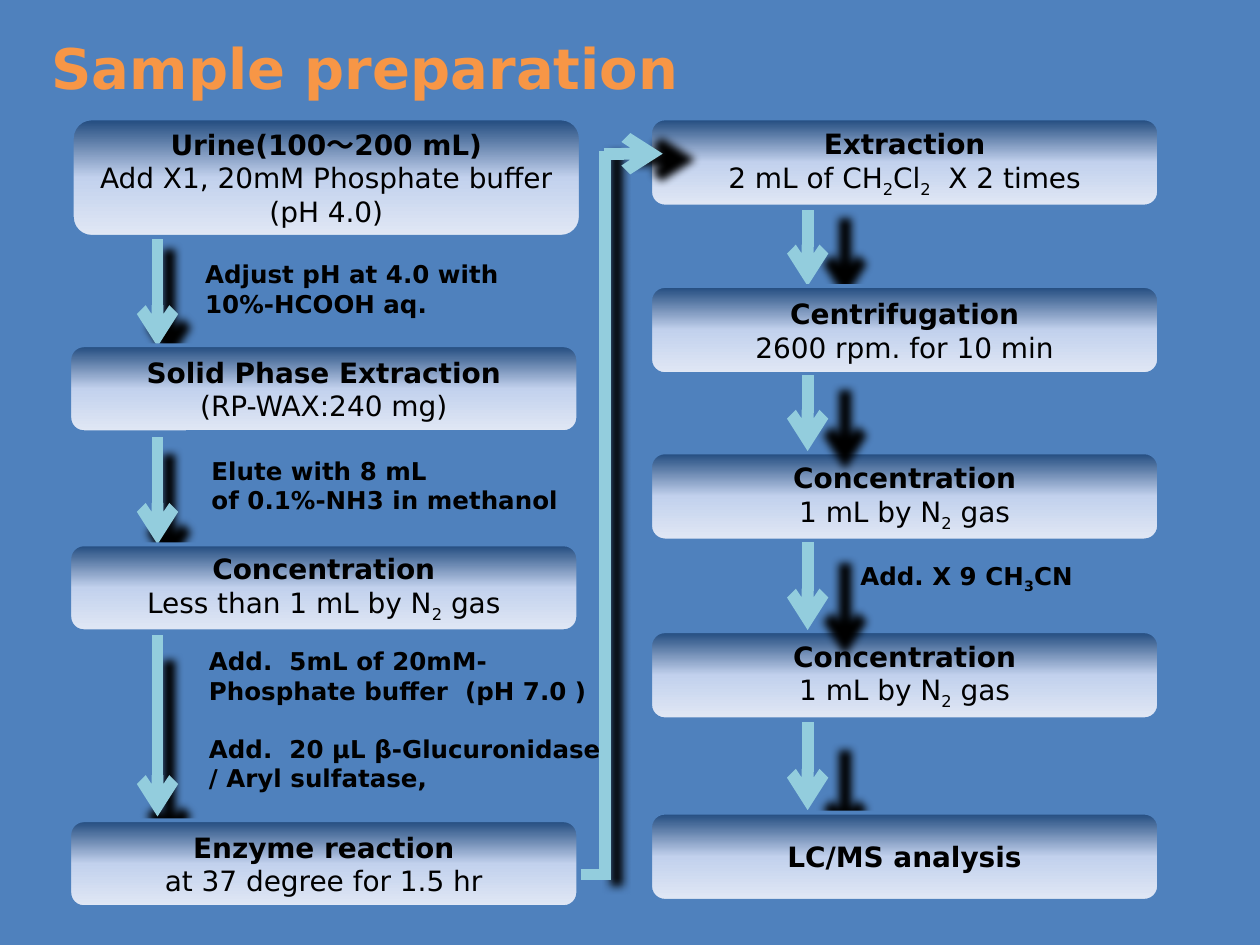
import copy

import pptx
import pptx.dml.color
import pptx.enum.shapes
import pptx.enum.text
import pptx.oxml.ns
import pptx.oxml.xmlchemy
import pptx.util
from lxml import etree

BLUE = pptx.dml.color.RGBColor(0x4F, 0x81, 0xBD)
ORANGE = pptx.dml.color.RGBColor(0xF7, 0x96, 0x46)
AQUA = pptx.dml.color.RGBColor(0x93, 0xCD, 0xDD)
BLACK = pptx.dml.color.RGBColor(0, 0, 0)
NAVY = pptx.dml.color.RGBColor(0x1F, 0x49, 0x7D)
MIST = pptx.dml.color.RGBColor(0xC2, 0xD1, 0xED)
PALE = pptx.dml.color.RGBColor(0xE1, 0xE8, 0xF5)
FONT = "DejaVu Sans"
COLUMNS, ROWS = 100, 75
LEFT, RIGHT = 5.5, 51.6
LEFT_ARROW, RIGHT_ARROW = 12.5, 64.1

STEPS = [
    (5.7, 9.4, 9.4, ["Urine(100～200 mL)", "Add X1, 20mM Phosphate buffer (pH 4.0)"]),
    (LEFT, 27.4, 6.9, ["Solid Phase Extraction", "(RP-WAX:240 mg)"]),
    (LEFT, 43.2, 6.9, ["Concentration", "Less than 1 mL by N_2_ gas"]),
    (LEFT, 65.1, 6.9, ["Enzyme reaction", "at 37 degree for 1.5 hr"]),
    (RIGHT, 9.4, 7, ["Extraction", "2 mL of CH_2_Cl_2_  X 2 times"]),
    (RIGHT, 22.7, 7, ["Centrifugation", "2600 rpm. for 10 min"]),
    (RIGHT, 35.9, 7, ["Concentration", "1 mL by N_2_ gas"]),
    (RIGHT, 50.1, 7, ["Concentration", "1 mL by N_2_ gas"]),
    (RIGHT, 64.5, 7, ["LC/MS analysis"]),
]
NOTES = [
    (15.3, 20.1, 26.1, 5.7, [["Adjust pH at 4.0 with", "10%-HCOOH aq."]]),
    (15.8, 35.7, 30.3, 5.7, [["Elute with 8 mL", "of 0.1%-NH3 in methanol"]]),
    (15.6, 50.8, 33.2, 12.8, [["Add.  5mL of 20mM-", "Phosphate buffer  (pH 7.0 )"],
                              ["Add.  20 μL β-Glucuronidase", "/ Aryl sulfatase,"]]),
    (67.3, 44, 19.4, 3.4, [["Add. X 9 CH_3_CN"]]),
]
ARROWS_BEHIND = [
    (LEFT_ARROW, 19, 27.5), (LEFT_ARROW, 34.7, 43.2), (LEFT_ARROW, 50.4, 64.8),
    (RIGHT_ARROW, 16.7, 22.7), (RIGHT_ARROW, 57.3, 64.3),
]
ARROWS_IN_FRONT = [(RIGHT_ARROW, 29.8, 35.8), (RIGHT_ARROW, 43, 50)]


def write(para, text, size=16, color=BLACK, bold=False, align=None, before=0):
    """Fill a paragraph; underscores enclose subscripts."""
    para.alignment = align
    para.space_before = pptx.util.Pt(before)
    for index, part in enumerate(text.split("_")):
        if not part:
            continue
        span = para.add_run()
        span.text = part
        span.font.name = FONT
        span.font.size = pptx.util.Pt(size)
        span.font.bold = bold
        span.font.color.rgb = color
        if index % 2:
            span._r.get_or_add_rPr().set("baseline", "-25000")


class FlowSlide:
    """Draw flow chart elements on a slide measured in columns and rows."""

    def __init__(self, deck):
        self.column = deck.slide_width / COLUMNS
        self.row = deck.slide_height / ROWS
        self.page = deck.slides.add_slide(deck.slide_layouts[5])
        self.page.background.fill.solid()
        self.page.background.fill.fore_color.rgb = BLUE

    def grid(self, *lengths):
        """Turn alternating columns and rows into lengths."""
        units = (self.column, self.row) * 2
        return [round(length * unit) for length, unit in zip(lengths, units)]

    def title(self, text, *place):
        """Place and format the title placeholder."""
        box = self.page.shapes.title
        box.left, box.top, box.width, box.height = self.grid(*place)
        frame = box.text_frame
        frame.auto_size = pptx.enum.text.MSO_AUTO_SIZE.NONE
        frame.vertical_anchor = pptx.enum.text.MSO_ANCHOR.TOP
        para = frame.paragraphs[0]
        write(para, text, size=32, color=ORANGE, bold=True,
              align=pptx.enum.text.PP_ALIGN.LEFT)
        para.line_spacing = 1.1

    def step(self, left, top, height, lines):
        """Draw a rounded box with a bold heading and a detail line."""
        box = self.page.shapes.add_shape(
            pptx.enum.shapes.MSO_SHAPE.ROUNDED_RECTANGLE,
            *self.grid(left, top, 40.4, height))
        box.shadow.inherit = False
        box.line.color.rgb = BLUE
        box.line.width = pptx.util.Pt(2.25)
        box.fill.gradient()
        box.fill.gradient_angle = 270
        stops = box._element.spPr.find(".//" + pptx.oxml.ns.qn("a:gsLst"))
        stops.append(copy.deepcopy(stops[-1]))
        for stop, color, position in zip(
                box.fill.gradient_stops, (NAVY, MIST, PALE), (0, 0.5, 1)):
            stop.color.rgb = color
            stop.position = position
        frame = box.text_frame
        frame.word_wrap = True
        frame.vertical_anchor = pptx.enum.text.MSO_ANCHOR.MIDDLE
        for index, line in enumerate(lines):
            para = frame.add_paragraph() if index else frame.paragraphs[0]
            write(para, line, bold=index == 0,
                  align=pptx.enum.text.PP_ALIGN.CENTER)

    def note(self, left, top, width, height, groups):
        """Draw bold text with a line's gap between groups."""
        box = self.page.shapes.add_textbox(*self.grid(left, top, width, height))
        frame = box.text_frame
        frame.word_wrap = False
        frame.auto_size = pptx.enum.text.MSO_AUTO_SIZE.SHAPE_TO_FIT_TEXT
        para = frame.paragraphs[0]
        for group_index, lines in enumerate(groups):
            for index, line in enumerate(lines):
                if group_index or index:
                    para = frame.add_paragraph()
                gap = 16.5 if group_index and not index else 0
                write(para, line, size=14, bold=True, before=gap)

    def line(self, *ends, head=True, shadow_scale=104):
        """Draw a thick line with an optional arrowhead and shadow."""
        link = self.page.shapes.add_connector(
            pptx.enum.shapes.MSO_CONNECTOR.STRAIGHT, *self.grid(*ends))
        link.line.color.rgb = AQUA
        link.line.width = pptx.util.Pt(6.75)
        qn = pptx.oxml.ns.qn
        if head:
            etree.SubElement(link.line._get_or_add_ln(), qn("a:tailEnd"), type="arrow")
        effects = etree.SubElement(link._element.spPr, qn("a:effectLst"))
        if shadow_scale:
            scale = str(shadow_scale * 1000)
            shadow = etree.SubElement(
                effects, qn("a:outerShdw"), blurRad=str(pptx.util.Pt(5)),
                dist=str(pptx.util.Pt(3)), dir="0", sx=scale, sy=scale,
                algn="tl", rotWithShape="0")
            etree.SubElement(shadow, qn("a:srgbClr"), val=str(BLACK))


def main():
    """Build the sample preparation slide."""
    deck = pptx.Presentation()
    deck.slide_width = pptx.util.Inches(10)
    deck.slide_height = pptx.util.Inches(7.5)
    flow = FlowSlide(deck)
    flow.title("Sample preparation", 3.1, 1.6, 85.2, 5.5)
    for x, top, bottom in ARROWS_BEHIND:
        flow.line(x, top, x, bottom)
    for step in STEPS:
        flow.step(*step)
    for x, top, bottom in ARROWS_IN_FRONT:
        flow.line(x, top, x, bottom)
    for note in NOTES:
        flow.note(*note)
    flow.line(48, 12, 48, 69.5, head=False, shadow_scale=101)
    flow.line(47.9, 12.2, 52.6, 12.2)
    flow.line(46.1, 69.4, 48.5, 69.4, head=False, shadow_scale=None)
    deck.save("out.pptx")


if __name__ == "__main__":
    main()
